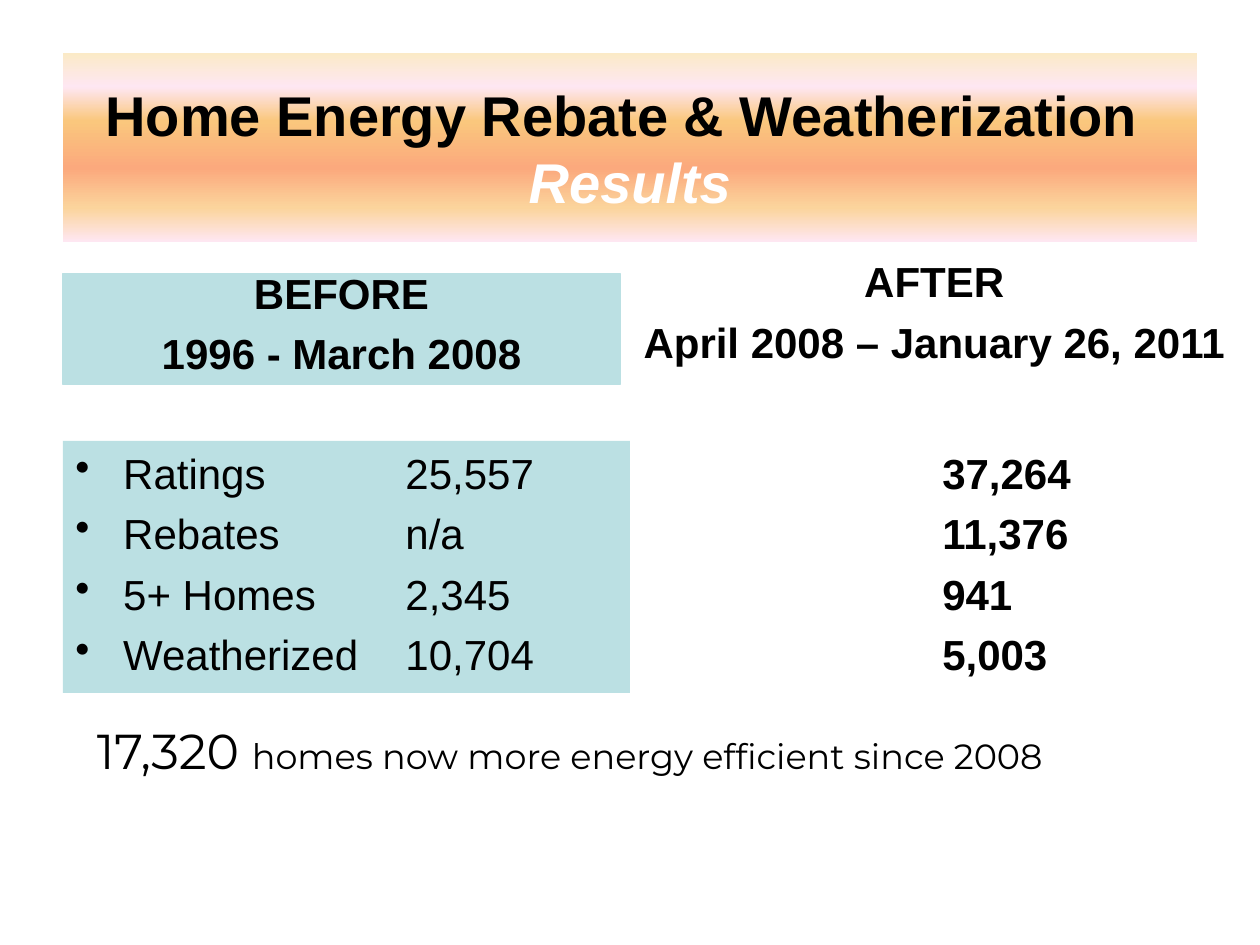
"""Build the home energy rebate and weatherization results slide."""
from dataclasses import dataclass
from typing import Optional

import pptx
import pptx.dml.color
import pptx.enum.shapes
import pptx.enum.text
import pptx.oxml
import pptx.oxml.ns
import pptx.util
from lxml import etree

Inches = pptx.util.Inches
Pt = pptx.util.Pt
RGBColor = pptx.dml.color.RGBColor
Align = pptx.enum.text.PP_ALIGN
Anchor = pptx.enum.text.MSO_ANCHOR

BLACK = RGBColor(0x00, 0x00, 0x00)
WHITE = RGBColor(0xFF, 0xFF, 0xFF)
TEAL = RGBColor(0xBB, 0xE0, 0xE3)
BANNER_STOPS = (
    (0, RGBColor(0xFB, 0xEA, 0xC7)),
    (18, RGBColor(0xFE, 0xE7, 0xF2)),
    (36, RGBColor(0xFA, 0xC7, 0x7D)),
    (61, RGBColor(0xFB, 0xA9, 0x7D)),
    (82, RGBColor(0xFB, 0xD4, 0x9C)),
    (100, RGBColor(0xFE, 0xE7, 0xF2)),
)
HANGING = Inches(0.38)
VALUE_TAB = Inches(2.62)
AFTER_INDENT = Inches(2.38)


@dataclass(frozen=True)
class Panel:
    left: float
    top: float
    width: float
    height: float
    lines: tuple[str, ...]
    fill: Optional[RGBColor] = None
    border: bool = False
    bold: bool = False
    align: Align = Align.LEFT
    anchor: Anchor = Anchor.TOP
    indent: int = 0
    bullet: bool = False


PANELS = (
    Panel(0.5, 2.17, 4.42, 0.88, ("BEFORE", "1996 - March 2008"), fill=TEAL,
          border=True, bold=True, align=Align.CENTER, anchor=Anchor.BOTTOM),
    Panel(0.5, 3.5, 4.5, 2, ("Ratings\t25,557", "Rebates\tn/a", "5+ Homes\t2,345",
                             "Weatherized\t10,704"), fill=TEAL, bullet=True),
    Panel(4.83, 2, 5.17, 0.96, ("AFTER", "April 2008 – January 26, 2011"),
          bold=True, align=Align.CENTER, anchor=Anchor.BOTTOM),
    Panel(5, 3.5, 4.42, 2.17, ("37,264", "11,376", "941", "5,003"),
          bold=True, indent=AFTER_INDENT),
)


def add_run(p, text: str, *, size: float = 24, font: str = "Arial",
            color: RGBColor = BLACK, bold: bool = False, italic: bool = False) -> None:
    """Append a formatted run to a paragraph."""
    r = p.add_run()
    r.text = text
    r.font.size, r.font.name = Pt(size), font
    r.font.bold, r.font.italic = bold, italic
    r.font.color.rgb = color


def add_box(slide, left: float, top: float, width: float, height: float,
            filled: bool):
    """Add a rectangle or a text box that wraps its text."""
    bounds = [Inches(n) for n in (left, top, width, height)]
    if filled:
        sp = slide.shapes.add_shape(pptx.enum.shapes.MSO_SHAPE.RECTANGLE, *bounds)
        sp.shadow.inherit = False
        sp.line.fill.background()
    else:
        sp = slide.shapes.add_textbox(*bounds)
    sp.text_frame.word_wrap = True
    return sp


def set_gradient(sp, stops: tuple[tuple[int, RGBColor], ...]) -> None:
    """Fill a shape with a top-to-bottom gradient."""
    sp.fill.gradient()
    sp.fill.gradient_angle = 270
    qn = pptx.oxml.ns.qn
    gs_list = next(sp._element.spPr.iter(qn("a:gsLst")))
    for old in list(gs_list):
        gs_list.remove(old)
    for position, color in stops:
        gs = etree.SubElement(gs_list, qn("a:gs"), pos=str(position * 1000))
        etree.SubElement(gs, qn("a:srgbClr"), val=str(color))


def set_list_format(p, indent: int, bullet: bool) -> None:
    """Set the indent of a paragraph, with a bullet and value tab if asked."""
    qn = pptx.oxml.ns.qn
    p_pr = p._p.get_or_add_pPr()
    p_pr.set("marL", str(HANGING if bullet else indent))
    p_pr.set("indent", str(-HANGING if bullet else 0))
    if bullet:
        etree.SubElement(p_pr, qn("a:buChar"), char="•")
        tabs = etree.SubElement(p_pr, qn("a:tabLst"))
        etree.SubElement(tabs, qn("a:tab"), pos=str(VALUE_TAB), algn="l")


def add_title(slide) -> None:
    """Add the gradient title banner."""
    sp = add_box(slide, 0.5, 0.42, 9, 1.5, True)
    set_gradient(sp, BANNER_STOPS)
    tf = sp.text_frame
    tf.vertical_anchor = Anchor.MIDDLE
    p = tf.paragraphs[0]
    p.alignment = Align.CENTER
    add_run(p, "Home Energy Rebate & Weatherization ", size=32, bold=True)
    p.add_line_break()
    add_run(p, "Results", size=32, color=WHITE, bold=True, italic=True)


def add_panel(slide, panel: Panel) -> None:
    """Add one heading or list panel."""
    sp = add_box(slide, panel.left, panel.top, panel.width, panel.height,
                 panel.fill is not None)
    if panel.fill is not None:
        sp.fill.solid()
        sp.fill.fore_color.rgb = panel.fill
    if panel.border:
        sp.line.color.rgb = panel.fill
        sp.line.width = Pt(0.75)
    tf = sp.text_frame
    tf.vertical_anchor = panel.anchor
    for i, line in enumerate(panel.lines):
        p = tf.add_paragraph() if i else tf.paragraphs[0]
        p.alignment = panel.align
        if i:
            p.space_before = Pt(5.8)
        set_list_format(p, panel.indent, panel.bullet)
        add_run(p, line, bold=panel.bold)


def add_summary(slide) -> None:
    """Add the closing line below the panels."""
    tf = add_box(slide, 0.67, 5.67, 8.96, 0.57, False).text_frame
    tf.word_wrap = False
    tf.auto_size = pptx.enum.text.MSO_AUTO_SIZE.SHAPE_TO_FIT_TEXT
    p = tf.paragraphs[0]
    add_run(p, "17,320 ", size=28, font="Montserrat")
    add_run(p, "homes now more energy efficient since 2008", size=20,
            font="Montserrat")


def main() -> None:
    """Create and save the presentation."""
    prs = pptx.Presentation()
    prs.slide_width, prs.slide_height = Inches(10), Inches(7.5)
    slide = prs.slides.add_slide(prs.slide_layouts[6])
    add_title(slide)
    for panel in PANELS:
        add_panel(slide, panel)
    add_summary(slide)
    prs.save("out.pptx")


if __name__ == "__main__":
    main()
